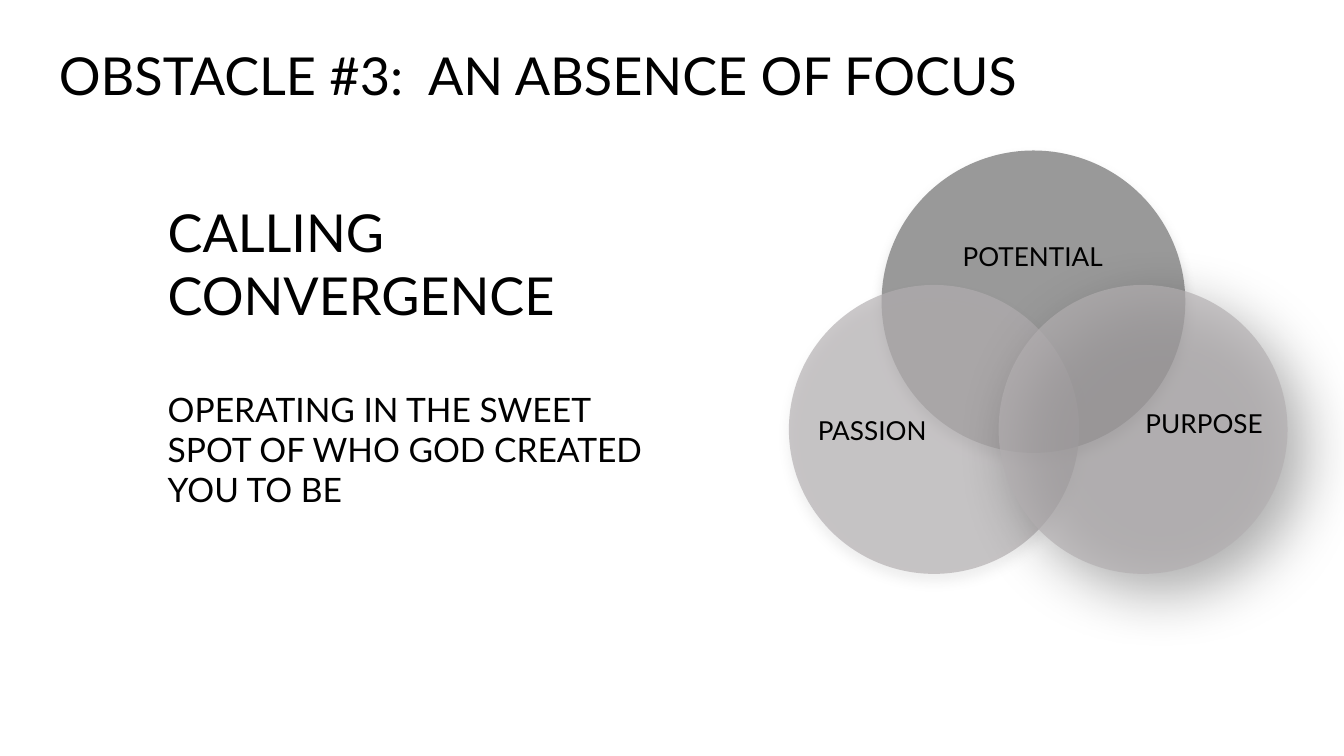
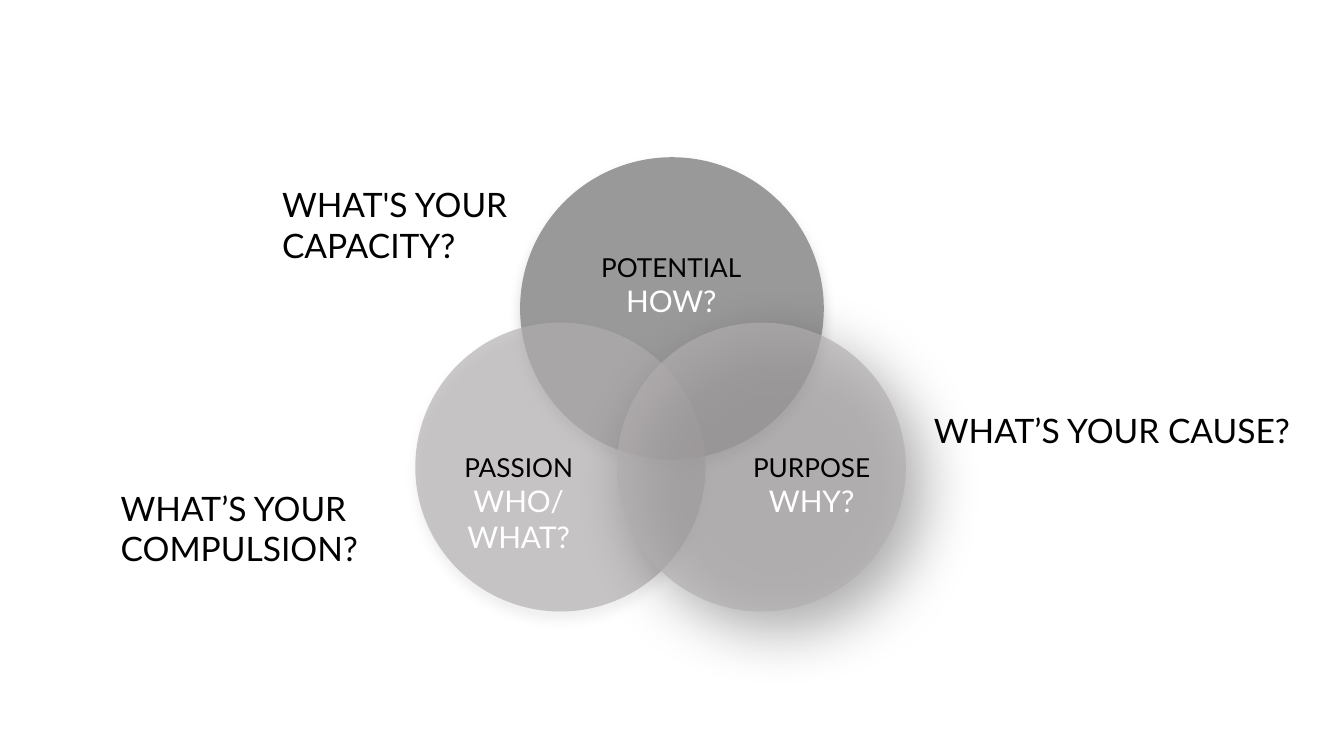
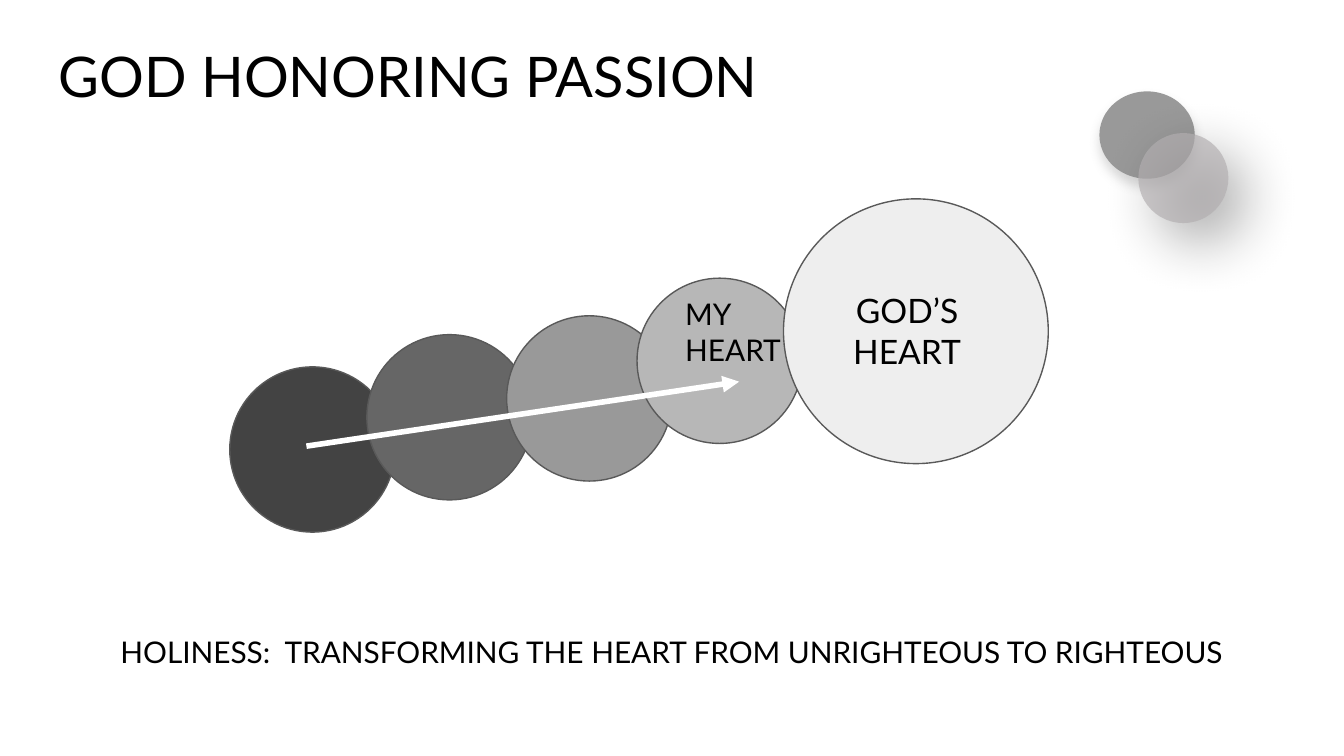
from dataclasses import dataclass

from lxml import etree
from pptx import Presentation
from pptx.dml.color import RGBColor
from pptx.enum import shapes, text
from pptx.oxml import ns
from pptx.util import Inches, Pt


@dataclass(frozen=True)
class Theme:
    font: str = "Lato"
    ink: str = "000000"
    paper: str = "FFFFFF"
    outline: str = "595959"
    title: int = 28
    big_title: int = 30
    body: int = 18
    question: int = 16
    label: int = 14
    outline_width: float = 0.75
    arrow_width: float = 3


THEME = Theme()
WIDTH, HEIGHT = Inches(10), Inches(5.625)
COLUMN = WIDTH / 100  # square grid: 100 columns, 56.25 rows
INSET = Inches(0.1)

# Fill, opacity %, shadow as (colour, opacity %, blur pt, distance pt, angle)
VENN_STYLES = {
    "POTENTIAL": ("999999", 100, ("929292", 35, 6, 4, 90)),
    "PASSION": ("B2AEB0", 67, ("929292", 22, 6, 4, 90)),
    "PURPOSE": ("B2AEB0", 67, ("000000", 48, 32, 14, 48)),
}
VENN_SIZES = {"POTENTIAL": (22.6, 22.5), "PASSION": (21.6, 21.5), "PURPOSE": (21.5, 21.5)}
LABEL_WIDTHS = {"POTENTIAL": 15.1, "PASSION": 12.4, "PURPOSE": 12.4}
LABEL_HEIGHTS = (4.4, 7.1, 9.8)  # for one, two and three lines

# Topic: circle's left and top, label's left and top, questions under the label
CALLING = {
    "POTENTIAL": ((65.6, 11.2), (69.3, 16.9), []),
    "PASSION": ((58.7, 21.2), (58.7, 29.8), []),
    "PURPOSE": ((74.3, 21.2), (83.4, 29.3), []),
}
QUESTIONS = {
    "POTENTIAL": ((38.7, 11.7), (42.4, 17.7), ["HOW?"]),
    "PASSION": ((30.9, 24), (32.4, 32.6), ["WHO/", "WHAT?"]),
    "PURPOSE": ((45.9, 24), (54.2, 32.6), ["WHY?"]),
}
PROMPTS = [
    ("WHAT'S YOUR CAPACITY?", (20, 12.7, 24.8, 9.1)),
    ("WHAT’S YOUR COMPULSION?", (8, 35.3, 29.7, 8.1)),
    ("WHAT’S YOUR CAUSE?", (68.5, 29.5, 29.2, 8.1)),
]
CORNER_CIRCLES = [
    ("POTENTIAL", (81.8, 6.8, 7.1, 6.5)),
    ("PURPOSE", (84.7, 9.9, 6.7, 6.7)),
]
# Fill, left, top, diameter
HEARTS = [
    ("434343", 17.1, 27.3, 12.3),
    ("666666", 27.3, 24.9, 12.3),
    ("999999", 37.7, 23.5, 12.3),
    ("B7B7B7", 47.4, 20.7, 12.3),
    ("EEEEEE", 58.3, 14.8, 19.7),
]
ARROW = (22.8, 33.2, 55, 28.4)


def grid(*places):
    return [round(place * COLUMN) for place in places]


def rgb(value):
    return RGBColor.from_string(value)


def line(words, size=THEME.body, color=THEME.ink, **paragraph_format):
    return words, size, color, paragraph_format


def add_text(slide, box, lines, align=text.PP_ALIGN.LEFT, anchor=text.MSO_ANCHOR.TOP):
    frame = slide.shapes.add_textbox(*grid(*box)).text_frame
    settings = dict(word_wrap=True, vertical_anchor=anchor, margin_left=INSET,
                    margin_right=INSET, margin_top=INSET, margin_bottom=INSET)
    for name, value in settings.items():
        setattr(frame, name, value)
    for index, (words, size, color, paragraph_format) in enumerate(lines):
        paragraph = frame.add_paragraph() if index else frame.paragraphs[0]
        for name, value in {"alignment": align, **paragraph_format}.items():
            setattr(paragraph, name, value)
        run = paragraph.add_run()
        run.text = words
        run.font.name, run.font.size = THEME.font, Pt(size)
        run.font.color.rgb = rgb(color)
    return frame


def add_title(slide, words, box, size):
    add_text(slide, box, [line(words, size)], anchor=text.MSO_ANCHOR.BOTTOM)


def add_circle(slide, box, fill):
    circle = slide.shapes.add_shape(shapes.MSO_SHAPE.OVAL, *grid(*box))
    circle.shadow.inherit = False
    circle.fill.solid()
    circle.fill.fore_color.rgb = rgb(fill)
    circle.line.fill.background()
    return circle


def set_opacity(color_element, percent):
    etree.SubElement(color_element, ns.qn("a:alpha"), val=str(percent * 1000))


def add_venn_circle(slide, topic, box):
    fill, opacity, (shade, shade_opacity, blur, distance, angle) = VENN_STYLES[topic]
    properties = add_circle(slide, box, fill)._element.spPr
    if opacity < 100:
        set_opacity(properties.find(".//" + ns.qn("a:srgbClr")), opacity)
    shadow = etree.SubElement(
        properties.find(ns.qn("a:effectLst")), ns.qn("a:outerShdw"),
        blurRad=str(Pt(blur)), dist=str(Pt(distance)), dir=str(angle * 60000),
        algn="bl", rotWithShape="0")
    set_opacity(etree.SubElement(shadow, ns.qn("a:srgbClr"), val=shade), shade_opacity)


def add_venn(slide, topics):
    for topic, (corner, _, _) in topics.items():
        add_venn_circle(slide, topic, corner + VENN_SIZES[topic])
    for topic, (_, corner, questions) in topics.items():
        box = corner + (LABEL_WIDTHS[topic], LABEL_HEIGHTS[len(questions)])
        lines = [line(topic, THEME.label)]
        lines += [line(words, THEME.question, THEME.paper) for words in questions]
        add_text(slide, box, lines, text.PP_ALIGN.CENTER)


def add_arrow(slide, ends):
    arrow = slide.shapes.add_connector(shapes.MSO_CONNECTOR.STRAIGHT, *grid(*ends))
    arrow.line.color.rgb = rgb(THEME.paper)
    arrow.line.width = Pt(THEME.arrow_width)
    etree.SubElement(arrow.line._get_or_add_ln(), ns.qn("a:tailEnd"), type="triangle")
    etree.SubElement(arrow._element.spPr, ns.qn("a:effectLst"))


def build_calling(slide):
    add_title(slide, "OBSTACLE #3:  AN ABSENCE OF FOCUS", (3.4, 0.8, 93.2, 8.1), THEME.title)
    add_text(slide, (11.5, 13.9, 39.6, 36.1), [
        line("CALLING CONVERGENCE", THEME.title),
        line("OPERATING IN THE SWEET SPOT OF WHO GOD CREATED YOU TO BE",
             space_before=Pt(THEME.title * 1.2)),
    ])
    add_venn(slide, CALLING)


def build_questions(slide):
    add_venn(slide, QUESTIONS)
    for words, box in PROMPTS:
        add_text(slide, box, [line(words)])


def build_passion(slide):
    add_title(slide, "GOD HONORING PASSION", (3.4, 2.6, 93.2, 6.5), THEME.big_title)
    add_text(slide, (3.4, 46.7, 93.2, 5.6), [
        line("HOLINESS:  TRANSFORMING THE HEART FROM UNRIGHTEOUS TO RIGHTEOUS",
             THEME.question, line_spacing=0.8),
    ], text.PP_ALIGN.CENTER)
    for topic, box in CORNER_CIRCLES:
        add_venn_circle(slide, topic, box)
    for fill, left, top, diameter in HEARTS:
        heart = add_circle(slide, (left, top, diameter, diameter), fill)
        heart.line.color.rgb = rgb(THEME.outline)
        heart.line.width = Pt(THEME.outline_width)
    add_text(slide, (50, 21, 10.1, 7.4),
             [line(words, THEME.question) for words in ("MY", "HEART")])
    gods_heart = add_text(slide, (60.8, 20.6, 14.6, 8.1),
                          [line("GOD’S"), line("HEART")], text.PP_ALIGN.CENTER)
    # A right indent moves the first line a little left of centre
    gods_heart.paragraphs[0]._p.get_or_add_pPr().set("marR", str(Inches(0.12)))
    add_arrow(slide, ARROW)


def main():
    deck = Presentation()
    deck.slide_width, deck.slide_height = WIDTH, HEIGHT
    for build in (build_calling, build_questions, build_passion):
        slide = deck.slides.add_slide(deck.slide_layouts[6])
        slide.background.fill.solid()
        slide.background.fill.fore_color.rgb = rgb(THEME.paper)
        build(slide)
    deck.save("out.pptx")


if __name__ == "__main__":
    main()
